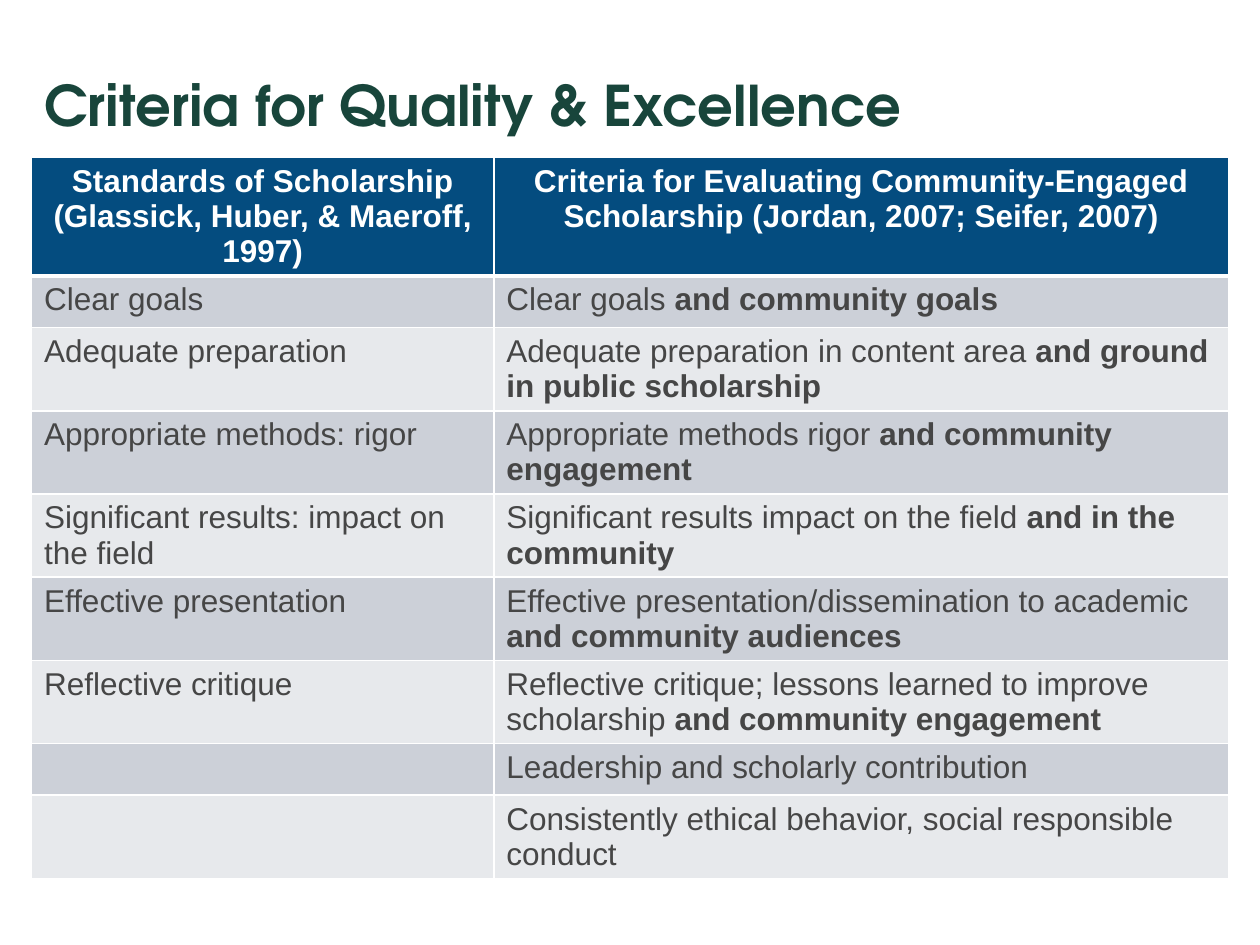
from lxml.etree import SubElement
from pptx import Presentation
from pptx.dml.color import RGBColor
from pptx.enum.text import MSO_ANCHOR, PP_ALIGN
from pptx.oxml.ns import qn
from pptx.util import Inches, Pt

COLORS = {
    "title": "18453B",
    "header": "044C7F",
    "odd": "CCD0D8",
    "even": "E7E9EC",
    "text": "464646",
    "white": "FFFFFF",
}
TITLE_FORMAT = {"name": "TeX Gyre Adventor", "size": Pt(32), "bold": True}
CELL_FORMAT = {"name": "Arial", "size": Pt(18)}

HEADINGS = [
    "Standards of Scholarship (Glassick, Huber, & Maeroff, 1997)",
    "Criteria for Evaluating Community-Engaged Scholarship (Jordan, 2007; Seifer, 2007)",
]
# Standard, criterion, bold addition to the criterion
CRITERIA = [
    ("Clear goals", "Clear goals ", "and community goals"),
    ("Adequate preparation", "Adequate preparation in content area ",
     "and ground in public scholarship"),
    ("Appropriate methods: rigor", "Appropriate methods rigor ",
     "and community engagement"),
    ("Significant results: impact on the field",
     "Significant results impact on the field ", "and in the community"),
    ("Effective presentation",
     "Effective presentation/dissemination to academic ",
     "and community audiences"),
    ("Reflective critique",
     "Reflective critique; lessons learned to improve scholarship ",
     "and community engagement"),
    ("", "Leadership and scholarly contribution", ""),
    ("", "Consistently ethical behavior, social responsible conduct", ""),
]
COLUMN_WIDTHS = [3.67, 5.83]
ROW_HEIGHT = 0.41


def color(name):
    return RGBColor.from_string(COLORS[name])


def format_font(font, values, color_name):
    for key, value in values.items():
        setattr(font, key, value)
    font.color.rgb = color(color_name)


def add_title(page, text):
    title = page.shapes.title
    title.left, title.top = Inches(0.25), Inches(0.58)
    title.width, title.height = Inches(9), Inches(0.5)
    frame = title.text_frame
    frame.text = text
    frame.word_wrap = True
    frame.vertical_anchor = MSO_ANCHOR.MIDDLE
    para = frame.paragraphs[0]
    para.alignment = PP_ALIGN.LEFT
    format_font(para.runs[0].font, TITLE_FORMAT, "title")


def set_borders(cell, bottom_width):
    properties = cell._tc.get_or_add_tcPr()
    widths = {"lnL": 1, "lnR": 1, "lnT": 1, "lnB": bottom_width}
    for index, (side, width) in enumerate(widths.items()):
        line = SubElement(properties, qn(f"a:{side}"), w=str(Pt(width)))
        fill = SubElement(line, qn("a:solidFill"))
        SubElement(fill, qn("a:srgbClr"), val=COLORS["white"])
        # Borders come before the fill in the cell properties
        properties.insert(index, line)


def fill_cell(cell, spans, fill, text_color, alignment=PP_ALIGN.LEFT, bottom_width=1):
    cell.fill.solid()
    cell.fill.fore_color.rgb = color(fill)
    set_borders(cell, bottom_width)
    para = cell.text_frame.paragraphs[0]
    para.alignment = alignment
    for text, bold in spans:
        if text:
            span = para.add_run()
            span.text = text
            format_font(span.font, {**CELL_FORMAT, "bold": bold}, text_color)


def add_criteria_table(page):
    rows = len(CRITERIA) + 1
    table = page.shapes.add_table(
        rows, len(COLUMN_WIDTHS), Inches(0.25), Inches(1.25),
        Inches(sum(COLUMN_WIDTHS)), Inches(rows * ROW_HEIGHT)).table
    for column, width in zip(table.columns, COLUMN_WIDTHS):
        column.width = Inches(width)

    # Header row with a thicker rule below
    for index, heading in enumerate(HEADINGS):
        fill_cell(table.cell(0, index), [(heading, True)], "header", "white",
                  PP_ALIGN.CENTER, bottom_width=3)

    # Banded body rows
    for row, (standard, criterion, addition) in enumerate(CRITERIA, start=1):
        band = "odd" if row % 2 else "even"
        fill_cell(table.cell(row, 0), [(standard, False)], band, "text")
        fill_cell(table.cell(row, 1), [(criterion, False), (addition, True)],
                  band, "text")


def main():
    deck = Presentation()
    deck.slide_width, deck.slide_height = Inches(10), Inches(7.5)
    page = deck.slides.add_slide(deck.slide_layouts[5])
    add_title(page, "Criteria for Quality & Excellence")
    add_criteria_table(page)
    deck.save("out.pptx")


if __name__ == "__main__":
    main()
